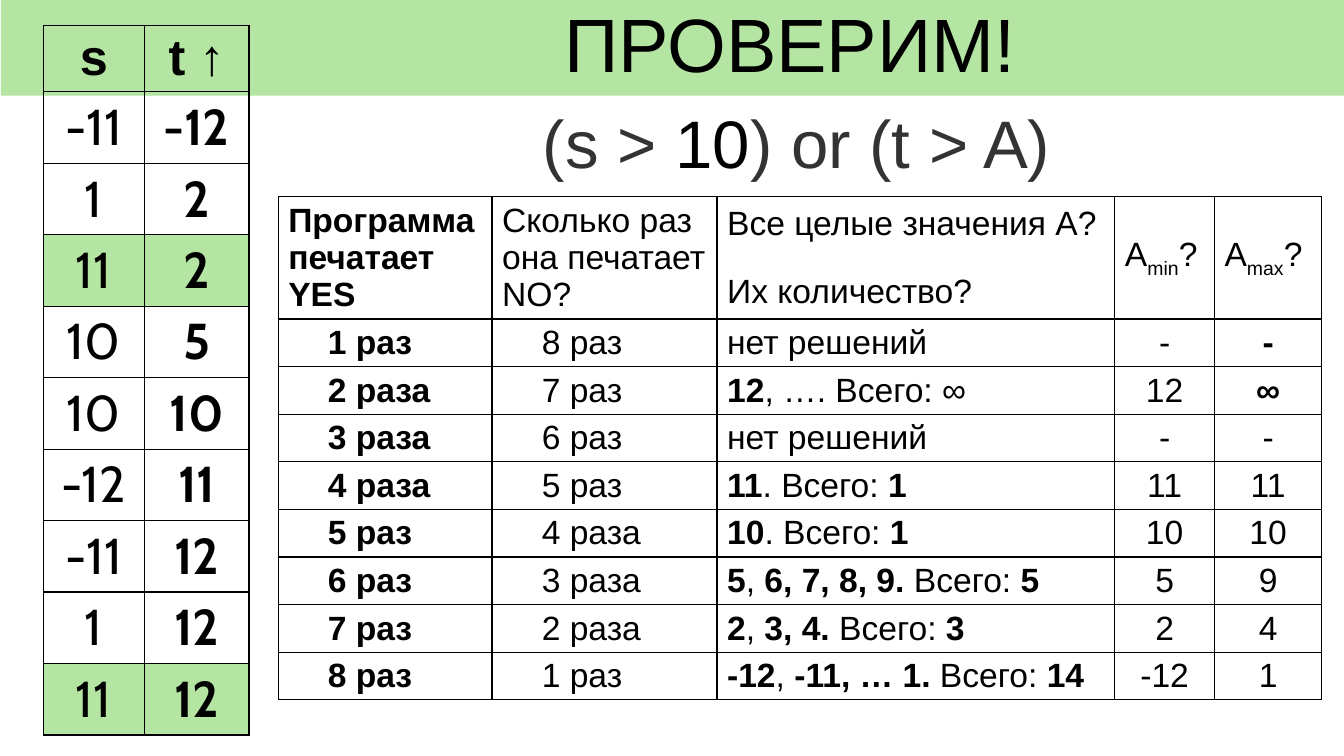
from dataclasses import dataclass

from lxml.etree import SubElement
from pptx import Presentation
from pptx.dml.color import RGBColor
from pptx.enum.text import MSO_ANCHOR, MSO_AUTO_SIZE, PP_ALIGN
from pptx.oxml.ns import qn
from pptx.util import Pt


@dataclass(frozen=True)
class Theme:
    """Colours, fonts and type sizes of the slide."""
    green: str = "B4E5A2"
    black: str = "000000"
    grey: str = "333333"
    font: str = "Arial"
    digits: str = "Cabin"
    title: int = 54
    formula: int = 48
    values: int = 36
    body: int = 24
    border: int = 1


THEME = Theme()

PAIRS = [(-11, -12), (1, 2), (11, 2), (10, 5), (10, 10),
         (-12, 11), (-11, 12), (1, 12), (11, 12)]

HEADINGS = ["*Программа печатает\nYES*", "Сколько раз она печатает NO?",
            "Все целые значения А? \nИх количество?", "А_min_?", "А_max_?"]

RESULTS = [
    ("1 раз", "8 раз", "нет решений", "-", "*-*"),
    ("2 раза", "7 раз", "*12*, …. Всего: ∞", "12", "*∞*"),
    ("3 раза", "6 раз", "нет решений", "-", "-"),
    ("4 раза", "5 раз", "*11*. Всего: *1*", "11", "11"),
    ("5 раз", "4 раза", "*10*. Всего: *1*", "10", "10"),
    ("6 раз", "3 раза", "*5*, *6, 7, 8, 9.* Всего: *5*", "5", "9"),
    ("7 раз", "2 раза", "*2*, *3, 4.* Всего: *3*", "2", "4"),
    ("8 раз", "1 раз", "*-12*, *-11, … 1.* Всего: *14*", "-12", "1"),
]


def add_text(para, text, *, size, font=THEME.font, color=THEME.black,
             bold=False, align=PP_ALIGN.LEFT, indent=0):
    """Append text to a paragraph; *stars* make bold and _underscores_ subscript."""
    para.alignment = align
    if indent:
        properties = para._p.get_or_add_pPr()
        properties.set("marL", str(Pt(indent)))
        properties.set("indent", "0")
    for star, strong in enumerate(text.split("*")):
        for score, piece in enumerate(strong.split("_")):
            for number, line in enumerate(piece.split("\n")):
                if number:
                    para.add_line_break()
                if not line:
                    continue
                span = para.add_run()
                span.text = line
                span.font.size = Pt(size)
                span.font.name = font
                span.font.bold = bold or star % 2 == 1
                span.font.color.rgb = RGBColor.from_string(color)
                if score % 2:
                    span.font._element.set("baseline", "-25000")


def format_cell(cell, fill=None):
    """Give a cell its fill and thin black borders."""
    properties = cell._tc.get_or_add_tcPr()
    for side in ("a:lnL", "a:lnR", "a:lnT", "a:lnB"):
        line = SubElement(properties, qn(side), w=str(Pt(THEME.border)))
        paint = SubElement(line, qn("a:solidFill"))
        SubElement(paint, qn("a:srgbClr"), val=THEME.black)
    if fill:
        cell.fill.solid()
        cell.fill.fore_color.rgb = RGBColor.from_string(fill)
    else:
        cell.fill.background()


def add_grid(page, box, widths, heights):
    """Add a plain table with the given column widths and row heights."""
    frame = page.shapes.add_table(len(heights), len(widths), *map(Pt, box))
    table = frame.table
    table.first_row = table.horz_banding = False
    for column, width in zip(table.columns, widths):
        column.width = Pt(width)
    for row, height in zip(table.rows, heights):
        row.height = Pt(height)
    frame.height = Pt(box[3])
    return table


def add_title(page, box):
    """Place the title in the green band."""
    title = page.shapes.title
    title.left, title.top, title.width, title.height = map(Pt, box)
    title.fill.solid()
    title.fill.fore_color.rgb = RGBColor.from_string(THEME.green)
    frame = title.text_frame
    frame.auto_size = MSO_AUTO_SIZE.NONE
    frame.vertical_anchor = MSO_ANCHOR.MIDDLE
    para = frame.paragraphs[0]
    para.line_spacing = 0.9
    add_text(para, "ПРОВЕРИМ!", size=THEME.title, indent=395.3)


def add_pairs(page, box):
    """List the s and t pairs, shading those with s above 10."""
    table = add_grid(page, box, [72, 74.9], [45.4] * (len(PAIRS) + 1))
    for row, pair in enumerate([("s", "t ↑"), *PAIRS]):
        shaded = row > 0 and pair[0] > 10
        for column, value in enumerate(pair):
            cell = table.cell(row, column)
            format_cell(cell, THEME.green if shaded else None)
            cell.vertical_anchor = MSO_ANCHOR.MIDDLE
            add_text(cell.text_frame.paragraphs[0], str(value), size=THEME.values,
                     font=THEME.digits if row else THEME.font,
                     bold=row == 0 or column == 1, align=PP_ALIGN.CENTER)


def add_results(page, box):
    """Show the values of A for each count of YES answers."""
    table = add_grid(page, box, [152.8, 160.7, 284.2, 71.1, 76.7],
                     [78.5] + [29.5] * len(RESULTS))
    for row, texts in enumerate([HEADINGS, *RESULTS]):
        for column, text in enumerate(texts):
            cell = table.cell(row, column)
            format_cell(cell)
            if row == 0:
                cell.vertical_anchor = MSO_ANCHOR.MIDDLE
            add_text(cell.text_frame.paragraphs[0], text, size=THEME.body,
                     bold=row > 0 and column == 0,
                     align=PP_ALIGN.CENTER if row and column > 2 else PP_ALIGN.LEFT,
                     indent=28.3 if row and column < 2 else 0)


def add_formula(page, box):
    """Write the tested condition under the title."""
    frame = page.shapes.add_textbox(*map(Pt, box)).text_frame
    frame.word_wrap = True
    frame.auto_size = MSO_AUTO_SIZE.SHAPE_TO_FIT_TEXT
    frame.vertical_anchor = MSO_ANCHOR.MIDDLE
    para = frame.paragraphs[0]
    para.space_after = Pt(12)
    for text, color in [("(s > ", THEME.grey), ("10", THEME.black),
                        (") or (t > A)", THEME.grey)]:
        add_text(para, text, size=THEME.formula, color=color, align=PP_ALIGN.CENTER)


def main():
    """Build the slide and save the deck."""
    deck = Presentation()
    deck.slide_width, deck.slide_height = Pt(960), Pt(540)
    page = deck.slides.add_slide(deck.slide_layouts[5])
    add_title(page, (0.7, 0, 960, 68.4))
    add_pairs(page, (31, 18, 146.9, 504))
    add_results(page, (198.7, 140.4, 745.5, 381.6))
    add_formula(page, (328.3, 68.4, 481.7, 65.5))
    deck.save("out.pptx")


if __name__ == "__main__":
    main()
